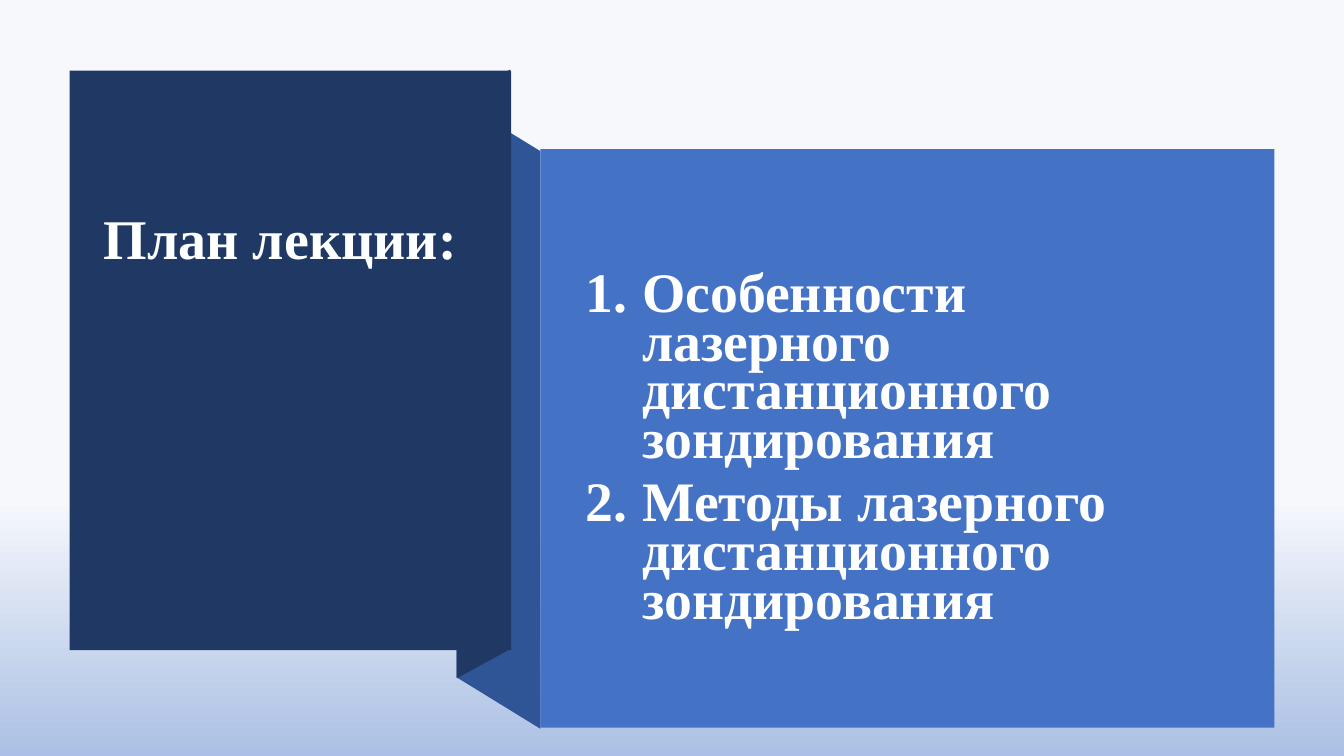
from lxml import etree
from pptx import Presentation
from pptx.dml.color import RGBColor
from pptx.enum import shapes, text
from pptx.oxml.ns import qn
from pptx.util import Inches, Pt

FONT = "Times New Roman"
NAVY, BLUE, MID_BLUE = "203864", "4472C4", "2F5597"
TOPICS = [
    "Особенности лазерного дистанционного зондирования",
    "Методы лазерного дистанционного зондирования",
]


def rgb(value):
    return RGBColor.from_string(value)


def paint(sp, color):
    sp.shadow.inherit = False
    sp.fill.solid()
    sp.fill.fore_color.rgb = rgb(color)
    sp.line.fill.background()


def add_panel(slide, left, top, width, height, color):
    sp = slide.shapes.add_shape(
        shapes.MSO_SHAPE.RECTANGLE,
        Inches(left), Inches(top), Inches(width), Inches(height))
    paint(sp, color)


def add_fold(slide, points, color):
    start, *rest = [(Inches(x), Inches(y)) for x, y in points]
    builder = slide.shapes.build_freeform(*start)
    builder.add_line_segments(rest, close=True)
    paint(builder.convert_to_shape(), color)


def place_text(slide, sp, left, top, width, height):
    """Position a placeholder in front of the panels."""
    slide.shapes._spTree.append(sp._element)
    sp.left, sp.top = Inches(left), Inches(top)
    sp.width, sp.height = Inches(width), Inches(height)
    tf = sp.text_frame
    tf.word_wrap = True
    tf.auto_size = text.MSO_AUTO_SIZE.NONE
    tf.vertical_anchor = text.MSO_ANCHOR.TOP
    return tf


def add_run(p, words, size, color):
    p.alignment = text.PP_ALIGN.LEFT
    r = p.add_run()
    r.text = words
    r.font.name = FONT
    r.font.size = Pt(size)
    r.font.bold = True
    r.font.color.rgb = rgb(color)


def number_paragraph(p, indent):
    pPr = p._p.get_or_add_pPr()
    pPr.set("marL", str(Inches(indent)))
    pPr.set("indent", str(-Inches(indent)))
    etree.SubElement(pPr, qn("a:buFont"), typeface=FONT)
    etree.SubElement(pPr, qn("a:buAutoNum"), type="arabicPeriod")


def add_topics(tf, topics):
    for i, topic in enumerate(topics):
        p = tf.paragraphs[0] if i == 0 else tf.add_paragraph()
        number_paragraph(p, 0.56)
        p.line_spacing = 0.73
        p.space_before = Pt(10 if i else 0)
        add_run(p, topic, 39.8, "FFFFFF")


def set_background(slide):
    fill = slide.background.fill
    fill.gradient()
    fill.gradient_angle = 270
    stops = [(0.66, "F6F8FC"), (1, "ABC0E4")]
    for stop, (position, color) in zip(fill.gradient_stops, stops):
        stop.position = position
        stop.color.rgb = rgb(color)


def main():
    prs = Presentation()
    prs.slide_width, prs.slide_height = Inches(13.33), Inches(7.5)
    slide = prs.slides.add_slide(prs.slide_layouts[1])
    set_background(slide)

    # Folded ribbon between the two panels
    add_fold(slide, [(5.36, 7.23), (4.53, 6.72), (4.53, 0.99), (5.36, 1.5)],
             MID_BLUE)
    add_fold(slide, [(5.06, 6.44), (4.53, 6.73), (4.53, 0.98), (5.06, 0.69)],
             NAVY)

    # Title and list panels
    add_panel(slide, 0.69, 0.7, 4.38, 5.75, NAVY)
    add_panel(slide, 5.36, 1.48, 7.28, 5.74, BLUE)

    # Lecture plan
    title, body = slide.placeholders
    tf = place_text(slide, body, 5.71, 1.48, 6.51, 4.74)
    tf.margin_top = Inches(1.23)
    add_topics(tf, TOPICS)
    tf = place_text(slide, title, 0.93, 1.97, 4.29, 0.77)
    add_run(tf.paragraphs[0], "План лекции:", 40, "FEFFFF")

    prs.save("out.pptx")


if __name__ == "__main__":
    main()
